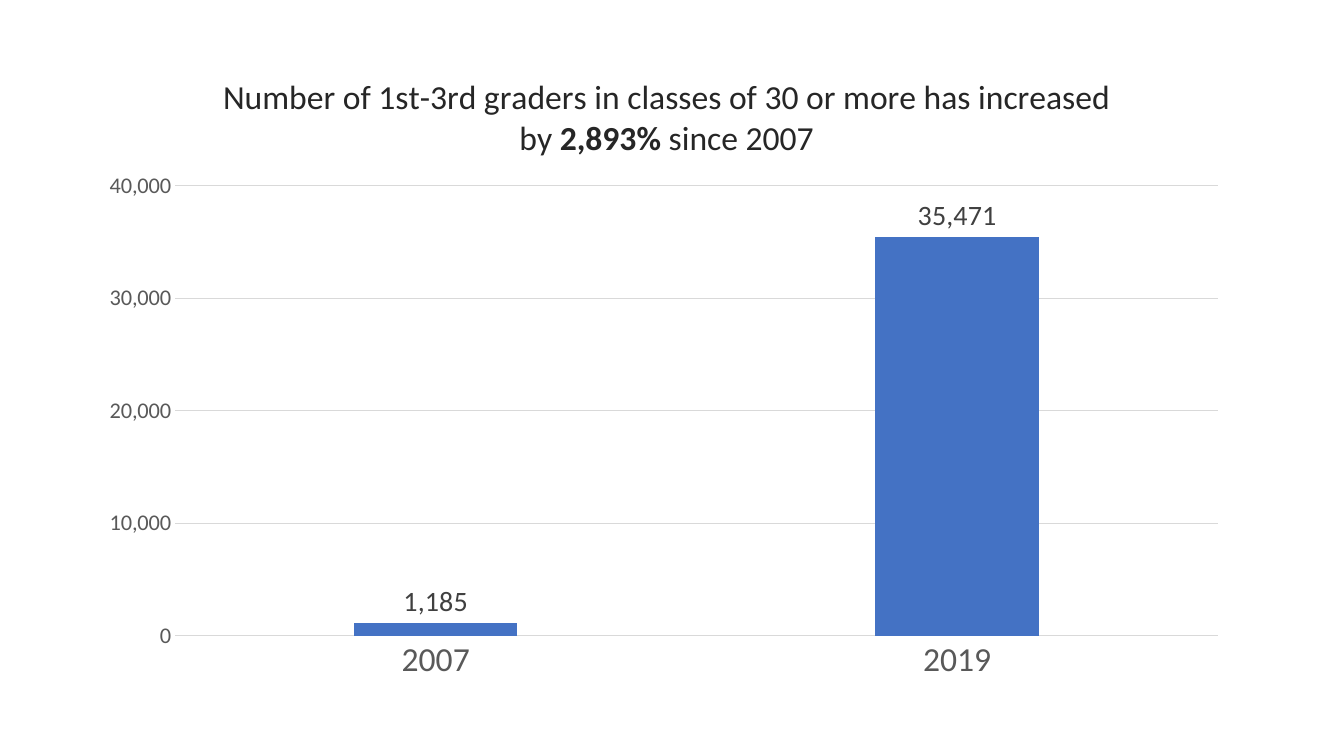
from typing import NamedTuple

from lxml.etree import SubElement
from pptx import Presentation
from pptx.chart.chart import Chart
from pptx.chart.data import CategoryChartData
from pptx.dml.color import RGBColor
from pptx.enum.chart import XL_CHART_TYPE, XL_LABEL_POSITION, XL_TICK_MARK
from pptx.oxml import parse_xml
from pptx.oxml.ns import nsdecls, qn
from pptx.text.text import Font
from pptx.util import Emu, Pt

WIDTH, HEIGHT = 1344, 756
SCALE = 12192000 / WIDTH
GRAY, RULE = "595959", "D9D9D9"


class Box(NamedTuple):
    left: int
    top: int
    width: int
    height: int


class Part(NamedTuple):
    text: str
    bold: bool = False


FRAME = Box(86, 49, 1155, 645)
PLOT = Box(175, 186, 1043, 450)
HEAD = Box(220, 73, 886, 82)
TITLE = [
    Part("Number of 1st-3rd graders in classes of 30 or more has increased by "),
    Part("2,893%", True),
    Part(" since 2007"),
]
COUNTS = {"2007": 1185, "2019": 35471}


def px(count: int) -> Emu:
    return Emu(round(count * SCALE))


def color(code: str) -> RGBColor:
    return RGBColor.from_string(code)


def style(font: Font, size: int, code: str, bold: bool = False) -> None:
    font.name, font.size, font.bold = "Calibri", Pt(size), bold
    font.color.rgb = color(code)


def place(parent, index: int, box: Box, inner: bool = False) -> None:
    """Give a chart part a fixed place, as fractions of the chart frame."""
    for old in parent.findall(qn("c:layout")):
        parent.remove(old)
    layout = parse_xml(f"<c:layout {nsdecls('c')}><c:manualLayout/></c:layout>")
    values = {"xMode": "edge", "yMode": "edge",
              "x": round((box.left - FRAME.left) / FRAME.width, 4),
              "y": round((box.top - FRAME.top) / FRAME.height, 4)}
    if inner:
        values = {"layoutTarget": "inner", **values,
                  "w": round(box.width / FRAME.width, 4),
                  "h": round(box.height / FRAME.height, 4)}
    for tag, value in values.items():
        SubElement(layout[0], qn(f"c:{tag}")).set("val", str(value))
    parent.insert(index, layout)


def add_title(chart: Chart) -> None:
    chart.has_title = True
    line = chart.chart_title.text_frame.paragraphs[0]
    for part in TITLE:
        run = line.add_run()
        run.text = part.text
        style(run.font, 24, "262626", part.bold)
    place(chart._chartSpace.chart.find(qn("c:title")), 1, HEAD)


def set_axes(chart: Chart) -> None:
    years, scale = chart.category_axis, chart.value_axis
    for axis, size in ((years, 24), (scale, 16)):
        axis.major_tick_mark = axis.minor_tick_mark = XL_TICK_MARK.NONE
        style(axis.tick_labels.font, size, GRAY)
    scale.minimum_scale, scale.maximum_scale = 0, 40000
    scale.major_unit = 10000
    scale.tick_labels.number_format = "#,##0"
    scale.tick_labels.number_format_is_linked = False
    scale.format.line.fill.background()
    for line in (years.format.line, scale.major_gridlines.format.line):
        line.color.rgb = color(RULE)
        line.width = Pt(0.75)


def set_bars(chart: Chart) -> None:
    plot = chart.plots[0]
    plot.gap_width, plot.overlap = 219, -27
    plot.vary_by_categories = False
    bars = plot.series[0]
    bars.format.fill.solid()
    bars.format.fill.fore_color.rgb = color("4472C4")
    labels = bars.data_labels
    labels.show_value = True
    labels.position = XL_LABEL_POSITION.OUTSIDE_END
    labels.number_format = "#,##0"
    labels.number_format_is_linked = False
    style(labels.font, 20, "404040")


def main() -> None:
    deck = Presentation()
    deck.slide_width, deck.slide_height = px(WIDTH), px(HEIGHT)
    slide = deck.slides.add_slide(deck.slide_layouts[6])
    data = CategoryChartData(number_format="#,##0")
    data.categories = list(COUNTS)
    data.add_series("Series 1", list(COUNTS.values()))
    chart = slide.shapes.add_chart(
        XL_CHART_TYPE.COLUMN_CLUSTERED, *map(px, FRAME), data).chart
    style(chart.font, 10, "000000")
    chart.has_legend = False
    add_title(chart)
    set_axes(chart)
    set_bars(chart)
    place(chart._chartSpace.chart.plotArea, 0, PLOT, inner=True)
    deck.save("out.pptx")


if __name__ == "__main__":
    main()
